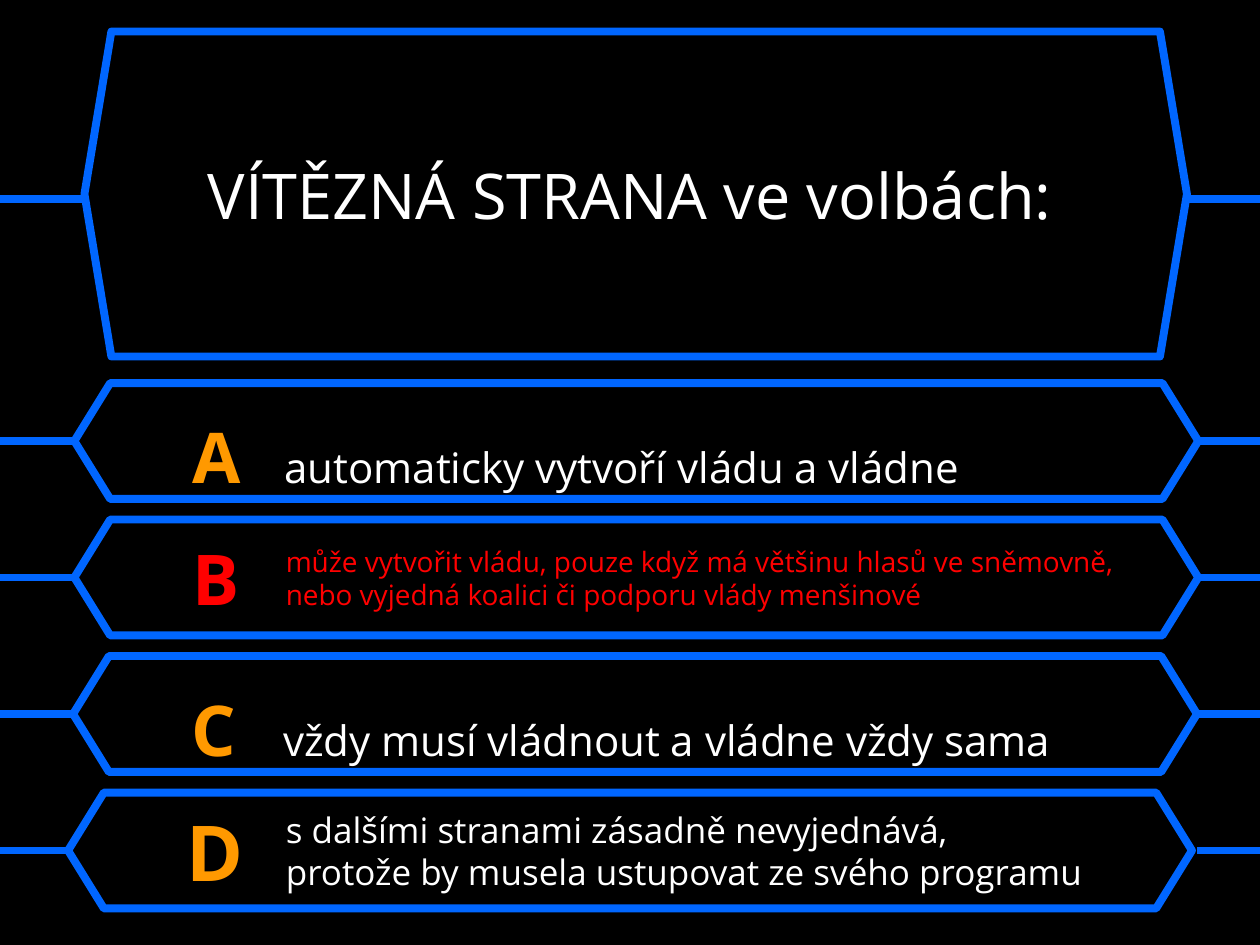
from lxml import etree
from pptx import Presentation
from pptx.dml.color import RGBColor
from pptx.enum.shapes import MSO_CONNECTOR as CONN, MSO_SHAPE as SHAPE
from pptx.enum.text import MSO_ANCHOR as ANCHOR, MSO_AUTO_SIZE as AUTO, PP_ALIGN as ALIGN
from pptx.oxml.ns import qn
from pptx.util import Inches, Pt

BLACK = RGBColor(0x00, 0x00, 0x00)
WHITE = RGBColor(0xFF, 0xFF, 0xFF)
BLUE = RGBColor(0x00, 0x66, 0xFF)
ORANGE = RGBColor(0xFF, 0x99, 0x00)
RED = RGBColor(0xFF, 0x00, 0x00)
FONT = "Open Sans"
ROW = 13 / 12

ANSWERS = [
    ("A", 40, ORANGE, 0.59, "automaticky vytvoří vládu a vládne", 24, WHITE, None),
    ("B", 40, RED, 0.59, "může vytvořit vládu, pouze když má většinu hlasů ve sněmovně, "
     "nebo vyjedná koalici či podporu vlády menšinové", 16, RED, (4.27, 0.64)),
    ("C", 40, ORANGE, 0.58, "vždy musí vládnout a vládne vždy sama", 24, WHITE, None),
    ("D", 44, ORANGE, 0.54, "s dalšími stranami zásadně nevyjednává,\v"
     "protože by musela ustupovat ze svého programu", 20, WHITE, (6.37, 0.77)),
]

prs = Presentation()
prs.slide_width, prs.slide_height = Inches(10), Inches(7.5)
s = prs.slides.add_slide(prs.slide_layouts[5])
s.background.fill.solid()
s.background.fill.fore_color.rgb = BLACK


def add_hexagon(x, y, w, h, adj):
    sp = s.shapes.add_shape(SHAPE.HEXAGON, Inches(x), Inches(y), Inches(w), Inches(h))
    sp.adjustments[0] = adj
    sp.shadow.inherit = False
    sp.fill.solid()
    sp.fill.fore_color.rgb = BLACK
    sp.line.color.rgb = BLUE
    sp.line.width = Pt(4.5)
    return sp


def set_font(font, size, color, bold=False):
    font.name, font.size, font.bold = FONT, Pt(size), bold
    font.color.rgb = color


add_hexagon(0.67, 0.25, 8.75, 2.58, 0.083)
for i, (letter, size, color, x, answer, answer_size, answer_color, box) in enumerate(ANSWERS):
    sp = add_hexagon(x, 3.04 + i * ROW, 8.92, 0.92, 0.309)
    tf = sp.text_frame
    tf.word_wrap = False
    tf.vertical_anchor = ANCHOR.MIDDLE
    p = tf.paragraphs[0]
    p.alignment = ALIGN.LEFT
    r = p.add_run()
    r.text = letter
    set_font(r.font, size, color, True)
    if box is None:
        tabs = etree.SubElement(p._p.get_or_add_pPr(), qn("a:tabLst"))
        etree.SubElement(tabs, qn("a:tab"), pos=str(Inches(0.73)), algn="l")
        for text, run_size, run_color in (("\t", 60, BLACK), (answer, answer_size, answer_color)):
            r = p.add_run()
            r.text = text
            set_font(r.font, run_size, run_color)
    else:
        top, height = box
        sp = s.shapes.add_textbox(Inches(2.17), Inches(top), Inches(7.04), Inches(height))
        tf = sp.text_frame
        tf.word_wrap = True
        tf.auto_size = AUTO.SHAPE_TO_FIT_TEXT
        p = tf.paragraphs[0]
        p.text = answer
        set_font(p.font, answer_size, answer_color)

wires = [(1.58, 0.67, 9.42)] + [(3.5 + i * ROW, 0.58, 9.5) for i in range(len(ANSWERS))]
for y, left, right in wires:
    for start, end in ((left, 0), (10, right)):
        line = s.shapes.add_connector(CONN.STRAIGHT, Inches(start), Inches(y), Inches(end), Inches(y))
        line.line.color.rgb = BLUE
        line.line.width = Pt(4.5)
        etree.SubElement(line._element.spPr, qn("a:effectLst"))

title = s.shapes.title
s.shapes._spTree.append(title._element)
title.left, title.top, title.width, title.height = (Inches(v) for v in (0.79, 0.42, 8.42, 2.25))
tf = title.text_frame
tf.word_wrap = True
tf.vertical_anchor = ANCHOR.MIDDLE
p = tf.paragraphs[0]
p.text = "VÍTĚZNÁ STRANA ve volbách:"
p.alignment = ALIGN.CENTER
set_font(p.font, 36, WHITE)

prs.save("out.pptx")
